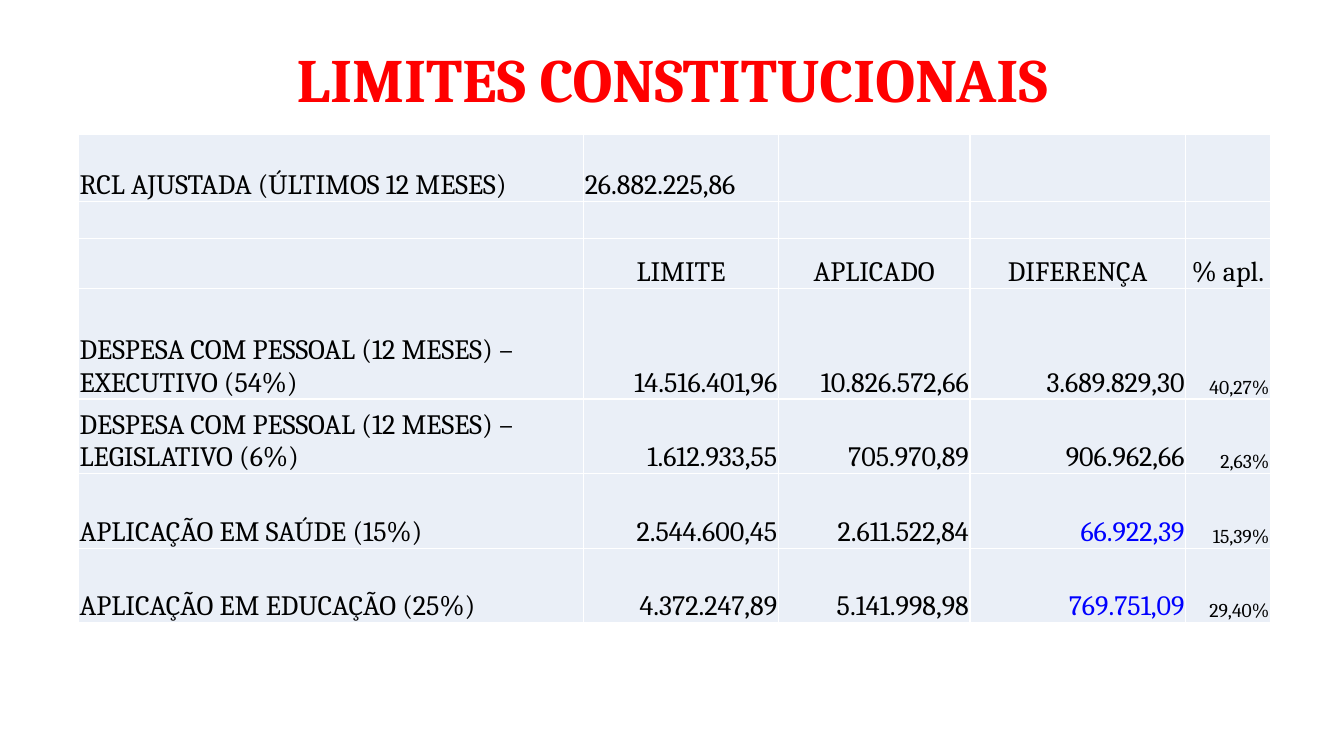
from lxml.etree import SubElement
from pptx import Presentation
from pptx.dml.color import RGBColor
from pptx.enum.text import MSO_ANCHOR, PP_ALIGN
from pptx.oxml.ns import qn
from pptx.util import Inches, Pt

COLORS = {
    "title": "FF0000",
    "text": "000000",
    "surplus": "0000FF",
    "cell": "EAEFF7",
    "border": "FFFFFF",
}

COLUMN_WIDTHS = [5.01, 1.93, 1.9, 2.14, 0.84]
ROW_HEIGHTS = [0.67, 0.37, 0.49, 1.1, 0.74, 0.74, 0.74]
HEADER_ROW = 2
PERCENT_COLUMN = 4
SURPLUS_CELLS = {(5, 3), (6, 3)}
LIMITS = [
    ["RCL AJUSTADA (ÚLTIMOS 12 MESES)", "26.882.225,86", "", "", ""],
    ["", "", "", "", ""],
    ["", "LIMITE", "APLICADO", "DIFERENÇA", "% apl."],
    ["DESPESA COM PESSOAL (12 MESES) – EXECUTIVO (54%)",
     "14.516.401,96", "10.826.572,66", "3.689.829,30", "40,27%"],
    ["DESPESA COM PESSOAL (12 MESES) – LEGISLATIVO (6%)",
     "1.612.933,55", "705.970,89", "906.962,66", "2,63%"],
    ["APLICAÇÃO EM SAÚDE (15%)",
     "2.544.600,45", "2.611.522,84", "66.922,39", "15,39%"],
    ["APLICAÇÃO EM EDUCAÇÃO (25%)",
     "4.372.247,89", "5.141.998,98", "769.751,09", "29,40%"],
]


class LimitsSlide:
    font_name = "Cambria"

    def __init__(self, presentation):
        self.slide = presentation.slides.add_slide(presentation.slide_layouts[5])

    def set_text(self, frame, text, size, color, align, bold=False):
        paragraph = frame.paragraphs[0]
        paragraph.text = text
        paragraph.alignment = align
        for run in paragraph.runs:
            run.font.name = self.font_name
            run.font.size = Pt(size)
            run.font.bold = bold
            run.font.color.rgb = RGBColor.from_string(COLORS[color])
        return paragraph

    def title(self, text, left, top, width, height):
        heading = self.slide.shapes.title
        heading.left, heading.top = Inches(left), Inches(top)
        heading.width, heading.height = Inches(width), Inches(height)
        frame = heading.text_frame
        frame.vertical_anchor = MSO_ANCHOR.MIDDLE
        paragraph = self.set_text(frame, text, 44, "title", PP_ALIGN.CENTER, True)
        paragraph.line_spacing = 0.9

    def borders(self, cell):
        properties = cell._tc.get_or_add_tcPr()
        for side in ("lnL", "lnR", "lnT", "lnB"):
            line = SubElement(properties, qn(f"a:{side}"), w=str(Pt(1)))
            fill = SubElement(line, qn("a:solidFill"))
            SubElement(fill, qn("a:srgbClr"), val=COLORS["border"])

    def cell(self, cell, text, size, color, align):
        cell.margin_left = cell.margin_right = cell.margin_top = Inches(0.01)
        cell.margin_bottom = 0
        cell.vertical_anchor = MSO_ANCHOR.BOTTOM
        self.borders(cell)
        cell.fill.solid()
        cell.fill.fore_color.rgb = RGBColor.from_string(COLORS["cell"])
        self.set_text(cell.text_frame, text, size, color, align)

    def table(self, rows, left, top):
        table = self.slide.shapes.add_table(
            len(rows), len(COLUMN_WIDTHS), Inches(left), Inches(top),
            Inches(sum(COLUMN_WIDTHS)), Inches(sum(ROW_HEIGHTS))).table
        table.first_row = table.horz_banding = False
        for column, width in zip(table.columns, COLUMN_WIDTHS):
            column.width = Inches(width)
        for row, height in zip(table.rows, ROW_HEIGHTS):
            row.height = Inches(height)
        for r, values in enumerate(rows):
            for c, value in enumerate(values):
                if c == 0 or r < HEADER_ROW:
                    align = PP_ALIGN.LEFT
                elif r == HEADER_ROW:
                    align = PP_ALIGN.CENTER
                else:
                    align = PP_ALIGN.RIGHT
                size = 14 if c == PERCENT_COLUMN and r > HEADER_ROW else 20
                color = "surplus" if (r, c) in SURPLUS_CELLS else "text"
                self.cell(table.cell(r, c), value, size, color, align)


def main():
    presentation = Presentation()
    presentation.slide_width = Inches(13.33)
    presentation.slide_height = Inches(7.5)
    limits = LimitsSlide(presentation)
    limits.title("LIMITES CONSTITUCIONAIS", 0.92, 0.4, 11.5, 0.83)
    limits.table(LIMITS, 0.78, 1.33)
    presentation.save("out.pptx")


if __name__ == "__main__":
    main()
